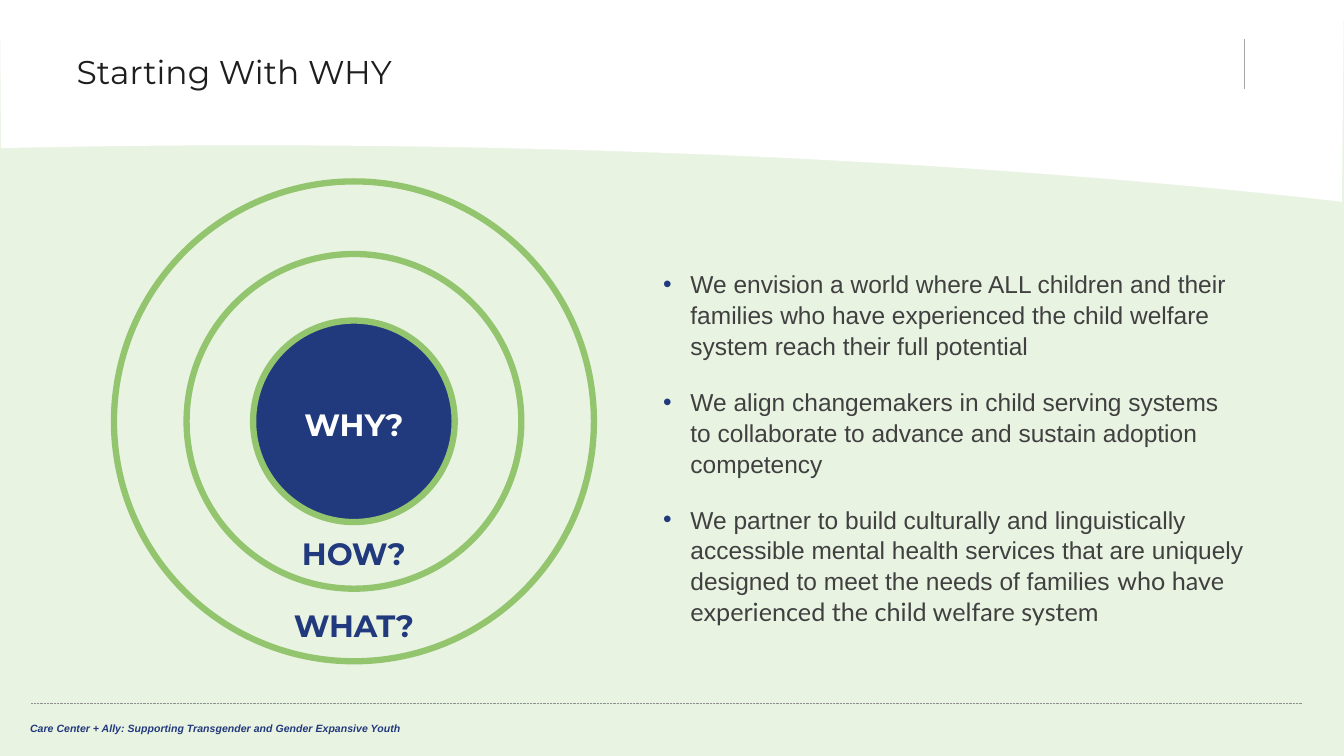
from collections import namedtuple

from lxml import etree
from pptx import Presentation, util as u
from pptx.dml.color import RGBColor
from pptx.enum import dml, shapes, text
from pptx.oxml.ns import qn

MINT = RGBColor(0xE9, 0xF3, 0xE2)
GREEN = RGBColor(0x92, 0xC5, 0x6E)
NAVY = RGBColor(0x21, 0x39, 0x7D)
WHITE = RGBColor(0xFF, 0xFF, 0xFF)
BLACK = RGBColor(0x1E, 0x1E, 0x1E)
DARK = RGBColor(0x40, 0x40, 0x40)
GRAY = RGBColor(0x8E, 0x8E, 0x8E)
PALE = RGBColor(0xA5, 0xA5, 0xA5)

Box = namedtuple("Box", "left top width height")
PAGE = Box(0, 0, u.Inches(13.33), u.Inches(7.5))

GOALS = [
    [("We envision a world where ALL children and their families who have "
      "experienced the child welfare system reach their full potential", "Arial", 17.5)],
    [("We align changemakers in child serving systems \v"
      "to collaborate to advance and sustain adoption competency", "Arial", 17.5)],
    [("We partner to build culturally and linguistically accessible mental health "
      "services that are uniquely designed to meet the needs of families ", "Arial", 17.5),
     ("who have experienced the child welfare system", "Lato", 18)],
]


def spot(box, x, y):
    """Point at x and y percent of the box."""
    return round(box.left + box.width * x / 100), round(box.top + box.height * y / 100)


def part(box, x, y, w, h):
    """Inner box, all lengths in percent of the outer one."""
    return Box(*spot(box, x, y), round(box.width * w / 100), round(box.height * h / 100))


def add_run(para, words, font, size, color, bold=False, italic=False):
    for i, piece in enumerate(words.split("\v")):
        if i:
            para.add_line_break()
        run = para.add_run()
        run.text = piece
        run.font.name, run.font.size = font, u.Pt(size)
        run.font.color.rgb = color
        run.font.bold, run.font.italic = bold, italic


def add_text(slide, box):
    frame = slide.shapes.add_textbox(*box).text_frame
    frame.word_wrap = True
    return frame


def add_line(slide, start, end, color):
    line = slide.shapes.add_connector(shapes.MSO_CONNECTOR.STRAIGHT, *start, *end)
    line.line.color.rgb, line.line.width = color, u.Pt(0.5)
    etree.SubElement(line.element.spPr, qn("a:effectLst"))
    return line


def add_bullet(para):
    props = para._p.get_or_add_pPr()
    props.set("marL", str(u.Inches(0.27)))
    props.set("indent", str(-u.Inches(0.27)))
    tint = etree.SubElement(props, qn("a:buClr"))
    etree.SubElement(tint, qn("a:srgbClr"), val=str(NAVY))
    etree.SubElement(props, qn("a:buFont"), typeface="Arial")
    etree.SubElement(props, qn("a:buChar"), char="•")


def draw_header(slide, box):
    """White band with a curved lower edge, and a short rule at the right."""
    knots = [(99.85, 100), (57.16, 68), (15.53, 71), (0.08, 73.5)]
    curve, steps = [], 40
    for i in range(steps + 1):
        t = i / steps
        mix = ((1 - t) ** 3, 3 * t * (1 - t) ** 2, 3 * t * t * (1 - t), t ** 3)
        x, y = (sum(m * k[axis] for m, k in zip(mix, knots)) for axis in (0, 1))
        curve.append(spot(box, x, y))
    pen = slide.shapes.build_freeform(*spot(box, 0, 0))
    pen.add_line_segments([spot(box, 100, 0)] + curve, close=True)
    band = pen.convert_to_shape()
    band.shadow.inherit = False
    band.fill.solid()
    band.fill.fore_color.rgb = WHITE
    band.line.fill.background()
    add_line(slide, spot(box, 92.57, 44), spot(box, 92.57, 19.5), PALE)


def draw_title(slide, box):
    title = slide.shapes.title
    title.left, title.top, title.width, title.height = box
    title.element.getparent().append(title.element)  # in front of the band
    frame = title.text_frame
    frame.auto_size = text.MSO_AUTO_SIZE.NONE
    frame.vertical_anchor = text.MSO_ANCHOR.MIDDLE
    para = frame.paragraphs[0]
    para.alignment, para.line_spacing = text.PP_ALIGN.LEFT, 0.9
    add_run(para, "Starting With WHY", "Montserrat", 23.5, BLACK)


def draw_footer(slide, box):
    rule = add_line(slide, spot(box, 0.85, 0), spot(box, 100, 0), GRAY)
    rule.line.dash_style = dml.MSO_LINE.ROUND_DOT
    frame = add_text(slide, part(box, 0, 36, 53, 64))
    add_run(frame.paragraphs[0], "Care Center + Ally: Supporting Transgender and Gender "
            "Expansive Youth", "Arial", 7.5, NAVY, True, True)


def draw_goals(slide, box):
    frame = add_text(slide, box)
    for i, goal in enumerate(GOALS):
        para = frame.add_paragraph() if i else frame.paragraphs[0]
        add_bullet(para)
        para.line_spacing = u.Pt(22)
        if i:
            para.space_before = u.Pt(18)
        for words, font, size in goal:
            add_run(para, words, font, size, DARK)


def draw_rings(slide, box):
    """Concentric circles, each with its label; spans are shares of the box."""
    rings = [("WHY?", 42, 45.8, WHITE), ("HOW?", 69.75, 72.5, NAVY),
             ("WHAT?", 100, 87.6, NAVY)]
    for word, span, top, color in rings:
        edge = (100 - span) / 2
        ring = slide.shapes.add_shape(shapes.MSO_SHAPE.OVAL,
                                      *part(box, edge, edge, span, span))
        ring.shadow.inherit = False
        ring.line.color.rgb, ring.line.width = GREEN, u.Pt(4.5)
        if word == "WHY?":
            ring.fill.solid()
            ring.fill.fore_color.rgb = NAVY
        else:
            ring.fill.background()
        para = add_text(slide, part(box, 28.25, top, 43.5, 9.87)).paragraphs[0]
        para.alignment = text.PP_ALIGN.CENTER
        add_run(para, word, "Montserrat", 22, color, True)


def main():
    deck = Presentation()
    deck.slide_width, deck.slide_height = PAGE.width, PAGE.height
    slide = deck.slides.add_slide(deck.slide_layouts[5])
    back = slide.background.fill
    back.solid()
    back.fore_color.rgb = MINT
    draw_header(slide, part(PAGE, 0, 0, 100, 26.67))
    draw_footer(slide, part(PAGE, 1.5, 93.07, 95.35, 4.8))
    draw_title(slide, part(PAGE, 4.95, 0, 84.85, 19.6))
    draw_goals(slide, part(PAGE, 48.61, 34.8, 45.54, 56.93))
    draw_rings(slide, part(PAGE, 8.48, 24, 35.71, 63.47))
    deck.save("out.pptx")


if __name__ == "__main__":
    main()
